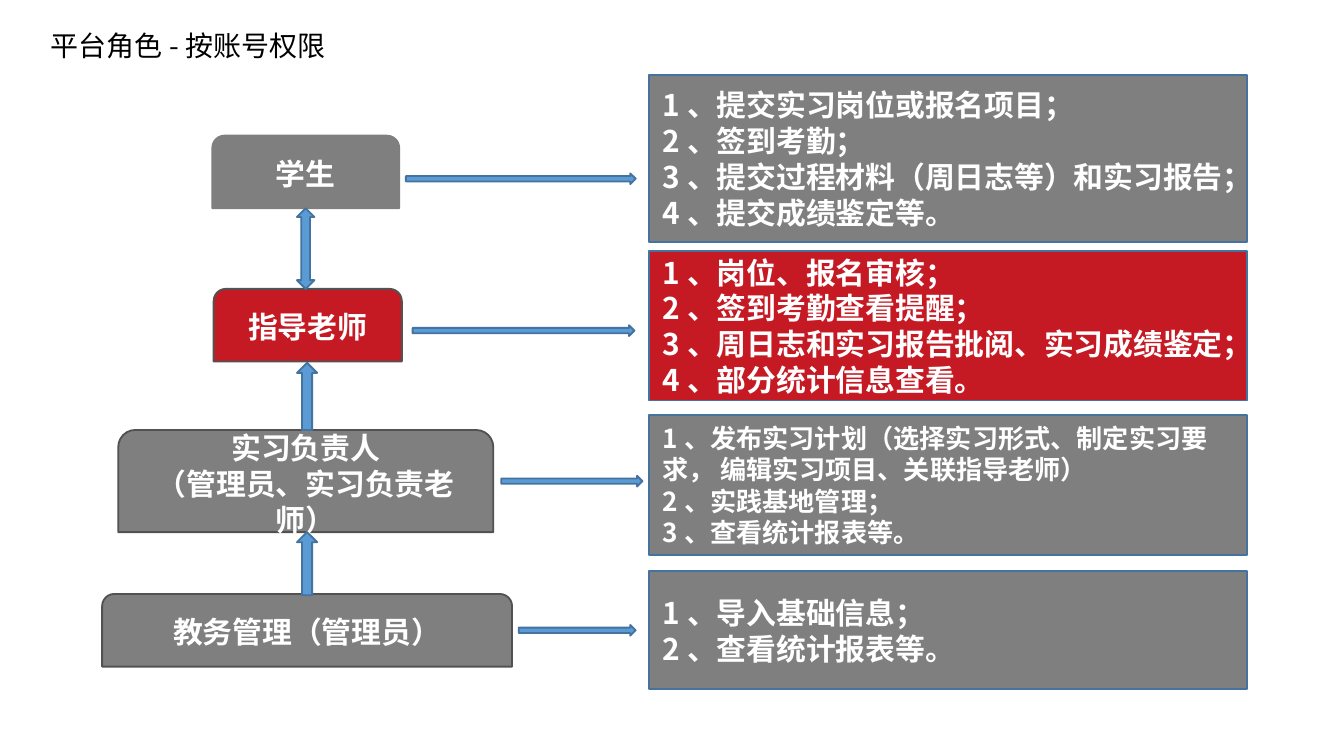
import pptx
import pptx.util
import pptx.dml.color
import pptx.enum.shapes
import pptx.enum.text
import pptx.oxml.ns
from lxml import etree

Inches = pptx.util.Inches
Pt = pptx.util.Pt
KIND = pptx.enum.shapes.MSO_SHAPE
ALIGN = pptx.enum.text.PP_ALIGN
ANCHOR = pptx.enum.text.MSO_ANCHOR

FONT = "Noto Sans CJK SC"
COLORS = {
    "gray": "7F7F7F",
    "red": "C51A24",
    "blue": "5B9BD5",
    "navy": "43739E",
    "dark": "525252",
    "white": "FFFFFF",
    "black": "000000",
}

# Role: text, box, fill, line
ROLES = [
    (["学生"], (1.58, 1.01, 1.39, 0.54), "gray", "gray"),
    (["指导老师"], (1.59, 2.15, 1.4, 0.54), "red", "dark"),
    (["实习负责人", "（管理员、实习负责老师）"], (0.88, 3.2, 2.79, 0.76), "gray", "dark"),
    (["教务管理（管理员）"], (0.76, 4.42, 3.05, 0.54), "gray", "dark"),
]

# Rights: top, height, fill, text size, lines
RIGHTS = [
    (0.56, 1.24, "gray", 16, [
        "1、提交实习岗位或报名项目；",
        "2、签到考勤；",
        "3、提交过程材料（周日志等）和实习报告；",
        "4、提交成绩鉴定等。",
    ]),
    (1.87, 1.11, "red", 16, [
        "1、岗位、报名审核；",
        "2、签到考勤查看提醒；",
        "3、周日志和实习报告批阅、实习成绩鉴定；",
        "4、部分统计信息查看。",
    ]),
    (3.09, 1.04, "gray", 14, [
        "1、发布实习计划（选择实习形式、制定实习要求， 编辑实习项目、关联指导老师）",
        "2、实践基地管理；",
        "3、查看统计报表等。",
    ]),
    (4.25, 0.88, "gray", 16, [
        "1、导入基础信息；",
        "2、查看统计报表等。",
    ]),
]

# Arrows from role to rights: left, top, width
LINKS = [(3.02, 1.29, 1.71), (3.07, 2.42, 1.65), (3.73, 3.54, 1.05), (3.86, 4.65, 0.87)]

# Arrows between roles: kind, top, width, height
STEPS = [
    (KIND.UP_DOWN_ARROW, 1.55, 0.13, 0.6),
    (KIND.UP_ARROW, 2.7, 0.15, 0.5),
    (KIND.UP_ARROW, 3.96, 0.15, 0.47),
]


def color(name):
    return pptx.dml.color.RGBColor.from_string(COLORS[name])


def write(shape, lines, size=16, ink="white", bold=True, align=ALIGN.LEFT,
          anchor=ANCHOR.MIDDLE):
    """Fill a shape with one paragraph per line."""
    frame = shape.text_frame
    frame.word_wrap = True
    frame.vertical_anchor = anchor
    for i, line in enumerate(lines):
        para = frame.add_paragraph() if i else frame.paragraphs[0]
        para.alignment = align
        para.line_spacing = Pt(size * 1.2)
        run = para.add_run()
        run.text = line
        font = run.font
        font.name, font.size, font.bold = FONT, Pt(size), bold
        font.color.rgb = color(ink)
        east = etree.SubElement(run._r.get_or_add_rPr(), pptx.oxml.ns.qn("a:ea"))
        east.set("typeface", FONT)


def draw(slide, kind, box, fill, line):
    shape = slide.shapes.add_shape(kind, *map(Inches, box))
    shape.shadow.inherit = False
    shape.fill.solid()
    shape.fill.fore_color.rgb = color(fill)
    shape.line.color.rgb = color(line)
    shape.line.width = Pt(1)
    return shape


def arrow(slide, kind, box):
    draw(slide, kind, box, "blue", "navy")


def main():
    deck = pptx.Presentation()
    deck.slide_width = Inches(10)
    deck.slide_height = Inches(10 * 9 / 16)
    slide = deck.slides.add_slide(deck.slide_layouts[6])

    title = slide.shapes.add_textbox(*map(Inches, (0.28, 0.08, 5.97, 0.43)))
    write(title, ["平台角色-按账号权限"], size=15, ink="black", bold=False,
          anchor=ANCHOR.BOTTOM)

    for lines, box, fill, line in ROLES:
        role = draw(slide, KIND.ROUND_2_SAME_RECTANGLE, box, fill, line)
        write(role, lines, align=ALIGN.CENTER)
    for top, height, fill, size, lines in RIGHTS:
        panel = draw(slide, KIND.RECTANGLE, (4.83, top, 4.45, height), fill, "navy")
        write(panel, lines, size=size)
    for left, top, width in LINKS:
        arrow(slide, KIND.RIGHT_ARROW, (left, top, width, 0.08))
    for kind, top, width, height in STEPS:
        arrow(slide, kind, (2.21, top, width, height))

    deck.save("out.pptx")


if __name__ == "__main__":
    main()
